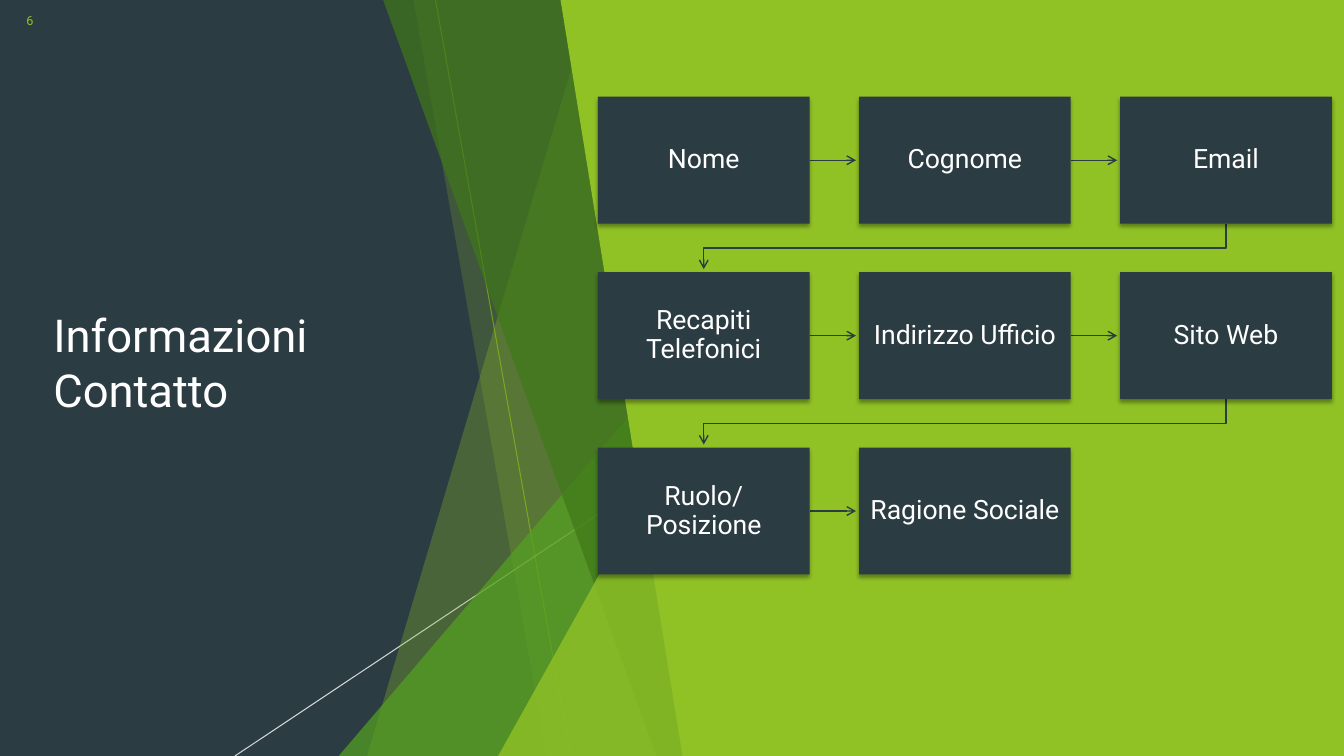
"""Build the contact information slide with its snaking flow of fields."""
from lxml import etree
from pptx import Presentation
from pptx.dml.color import RGBColor
from pptx.enum.shapes import MSO_CONNECTOR, MSO_SHAPE
from pptx.enum.text import MSO_ANCHOR, PP_ALIGN
from pptx.oxml.ns import qn
from pptx.util import Inches, Pt

RECTANGLE = MSO_SHAPE.RECTANGLE
TRIANGLE = MSO_SHAPE.ISOSCELES_TRIANGLE
STRAIGHT = MSO_CONNECTOR.STRAIGHT
MIDDLE = MSO_ANCHOR.MIDDLE
LEFT, CENTER, RIGHT = PP_ALIGN.LEFT, PP_ALIGN.CENTER, PP_ALIGN.RIGHT

WIDTH, HEIGHT = 13.33, 7.5
DARK, LIME, WHITE = "2C3C43", "90C226", "FFFFFF"
FIELDS = ["Nome", "Cognome", "Email", "Recapiti Telefonici", "Indirizzo Ufficio",
          "Sito Web", "Ruolo/Posizione", "Ragione Sociale"]
COLUMNS = 3
GRID_LEFT, GRID_TOP = 5.93, 0.96
STEP_X, STEP_Y = 2.59, 1.74
BOX_WIDTH, BOX_HEIGHT = 2.1, 1.26
ARROW_GAP = 0.03


def color(value):
    return RGBColor.from_string(value)


def set_alpha(parent, percent):
    for node in parent.iter(qn("a:srgbClr")):
        etree.SubElement(node, qn("a:alpha"), val=str(percent * 1000))


class SlideBuilder:
    def __init__(self, page, font):
        self.page = page
        self.shapes = page.shapes
        self.font = font

    def background(self, fill):
        self.page.background.fill.solid()
        self.page.background.fill.fore_color.rgb = color(fill)

    def paint(self, shape, fill, alpha=100):
        shape.shadow.inherit = False
        shape.fill.solid()
        shape.fill.fore_color.rgb = color(fill)
        shape.line.fill.background()
        if alpha < 100:
            set_alpha(shape._element.spPr.find(qn("a:solidFill")), alpha)

    def stroke(self, shape, line_color, width, alpha=100, arrow=False):
        shape.line.color.rgb = color(line_color)
        shape.line.width = Pt(width)
        line = shape._element.spPr.find(qn("a:ln"))
        if alpha < 100:
            set_alpha(line, alpha)
        if arrow:
            etree.SubElement(line, qn("a:tailEnd"), type="arrow")

    def outline(self, points, close):
        corners = [(Inches(x), Inches(y)) for x, y in points]
        builder = self.shapes.build_freeform(*corners[0], scale=1.0)
        builder.add_line_segments(corners[1:], close=close)
        return builder.convert_to_shape()

    def polygon(self, points, fill, alpha=100):
        self.paint(self.outline(points, True), fill, alpha)

    def preset(self, kind, left, top, width, height, fill, alpha=100):
        shape = self.shapes.add_shape(
            kind, Inches(left), Inches(top), Inches(width), Inches(height))
        self.paint(shape, fill, alpha)
        return shape

    def corner_triangle(self, left, top, width, height, fill, alpha):
        shape = self.preset(TRIANGLE, left, top, width, height, fill, alpha)
        shape.adjustments[0] = 1

    def line(self, start, end, line_color, width, alpha=100, arrow=False):
        connector = self.shapes.add_connector(
            STRAIGHT, *(Inches(value) for value in (*start, *end)))
        self.stroke(connector, line_color, width, alpha, arrow)
        etree.SubElement(connector._element.spPr, qn("a:effectLst"))

    def bent_arrow(self, points, line_color, width):
        shape = self.outline(points, False)
        shape.shadow.inherit = False
        shape.fill.background()
        self.stroke(shape, line_color, width, arrow=True)

    def set_text(self, shape, text, size, text_color, align):
        frame = shape.text_frame
        frame.word_wrap = True
        frame.vertical_anchor = MIDDLE
        frame.text = text
        para = frame.paragraphs[0]
        para.alignment = align
        span = para.runs[0]
        span.font.name = self.font
        span.font.size = Pt(size)
        span.font.color.rgb = color(text_color)
        return para

    def text(self, left, top, width, height, text, size, text_color, align):
        box = self.shapes.add_textbox(
            Inches(left), Inches(top), Inches(width), Inches(height))
        self.set_text(box, text, size, text_color, align)

    def field_box(self, left, top, text):
        box = self.preset(RECTANGLE, left, top, BOX_WIDTH, BOX_HEIGHT, DARK)
        effects = box._element.spPr.find(qn("a:effectLst"))
        shadow = etree.SubElement(
            effects, qn("a:outerShdw"), blurRad=str(Pt(3)), dist=str(Pt(2)),
            dir="5400000", rotWithShape="0")
        etree.SubElement(shadow, qn("a:srgbClr"), val="000000")
        set_alpha(shadow, 35)
        self.set_text(box, text, 19, WHITE, CENTER).line_spacing = 0.9
        box.text_frame.margin_top = box.text_frame.margin_bottom = Inches(0.11)


def draw_facets(slide):
    slide.line((4.32, 0), (5.66, HEIGHT), "6C921D", 0.75)
    slide.line((7.54, 4.03), (2.33, HEIGHT), WHITE, 0.75, alpha=80)
    right = 6.92
    for top_x, bottom_x, fill, alpha in [(5.87, 3.64, LIME, 30), (4.1, 5.42, LIME, 20)]:
        slide.polygon([(top_x, 0), (right, 0), (right, HEIGHT), (bottom_x, HEIGHT)],
                      fill, alpha)
    slide.corner_triangle(3.36, 3.33, 3.56, 4.17, "54A021", 72)
    slide.polygon([(3.8, 0), (right, 0), (right, HEIGHT), (6.51, HEIGHT)], "3F7819", 70)
    slide.corner_triangle(4.94, 3.93, 1.99, 3.57, LIME, 80)
    slide.polygon([(5.56, 0), (WIDTH, 0), (WIDTH, HEIGHT), (6.77, HEIGHT)], LIME)


def draw_flow(slide):
    for index, field in enumerate(FIELDS):
        row, column = divmod(index, COLUMNS)
        left = GRID_LEFT + column * STEP_X
        top = GRID_TOP + row * STEP_Y
        if index < len(FIELDS) - 1:
            if column < COLUMNS - 1:
                middle = top + BOX_HEIGHT / 2
                slide.line((left + BOX_WIDTH, middle),
                           (left + STEP_X - ARROW_GAP, middle), DARK, 1, arrow=True)
            else:
                start_x = left + BOX_WIDTH / 2
                end_x = GRID_LEFT + BOX_WIDTH / 2
                bottom = top + BOX_HEIGHT
                turn = (bottom + top + STEP_Y) / 2
                slide.bent_arrow([(start_x, bottom), (start_x, turn), (end_x, turn),
                                  (end_x, top + STEP_Y - ARROW_GAP)], DARK, 1)
        slide.field_box(left, top, field)


def main():
    deck = Presentation()
    deck.slide_width, deck.slide_height = Inches(WIDTH), Inches(HEIGHT)
    slide = SlideBuilder(deck.slides.add_slide(deck.slide_layouts[6]), "Roboto")
    slide.background(DARK)
    draw_facets(slide)
    draw_flow(slide)
    slide.text(0.43, 2.99, 3.98, 1.2, "Informazioni Contatto", 32.4, WHITE, LEFT)
    slide.text(0, 0, 0.43, 0.4, "6", 9, LIME, RIGHT)
    deck.save("out.pptx")


if __name__ == "__main__":
    main()
